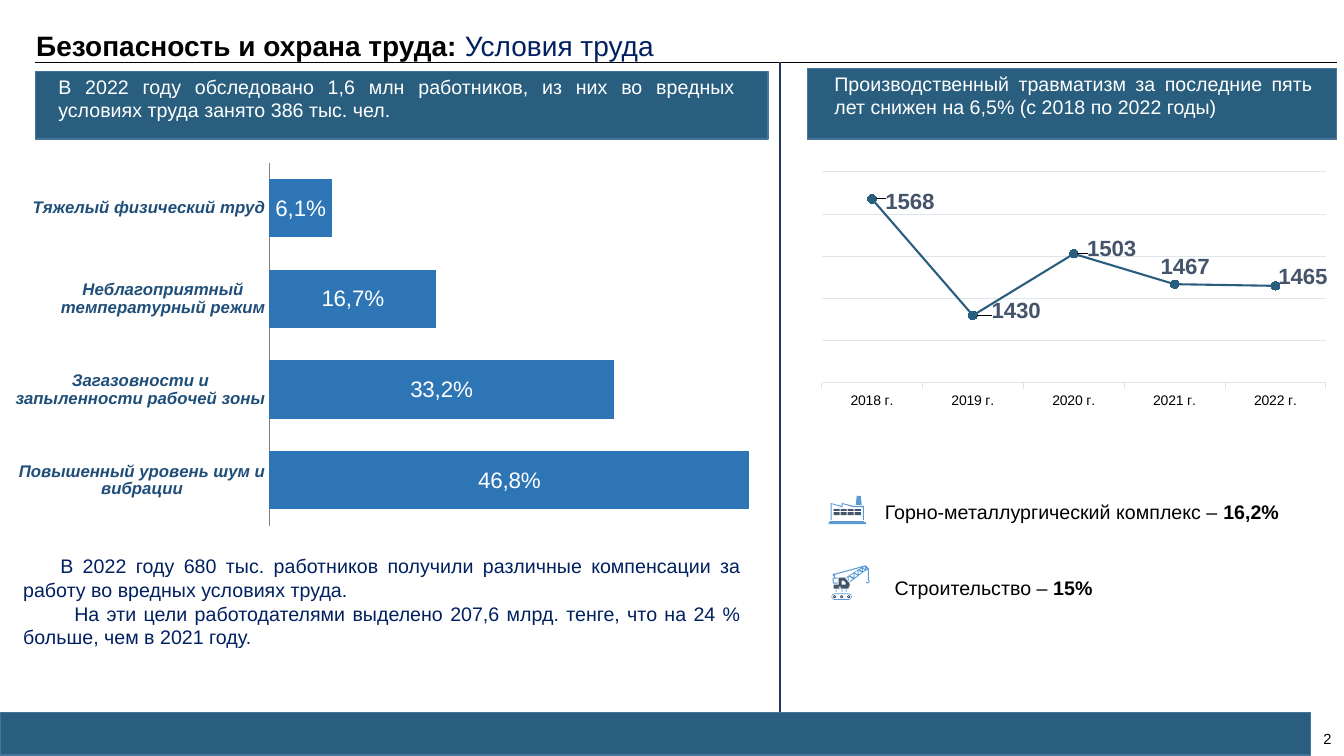
import lxml.etree
import pptx
import pptx.chart.data
import pptx.dml.color
import pptx.enum.chart
import pptx.enum.shapes
import pptx.enum.text
import pptx.oxml
import pptx.oxml.ns
import pptx.util

Pt = pptx.util.Pt
chart_enum = pptx.enum.chart
qn = pptx.oxml.ns.qn
COLORS = {"teal": "295E7E", "edge": "43739E", "bar": "2E75B6", "navy": "002060",
          "divider": "203864", "category": "1F4E79", "slate": "44546A", "sky": "5B9BD5",
          "grid": "E0E5EB", "axis": "808080", "black": "000000", "white": "FFFFFF"}
RGB = {name: pptx.dml.color.RGBColor.from_string(code) for name, code in COLORS.items()}


def style(font, size, color, **flags):
    for name, value in {"name": "Arial", "size": Pt(size), "bold": False, **flags}.items():
        setattr(font, name, value)
    font.color.rgb = RGB[color]


def set_layout(parent, index, values):
    """Put a manual chart layout at the given child index of parent."""
    for old in parent.findall(qn("c:layout")):
        parent.remove(old)
    layout = lxml.etree.Element(qn("c:layout"))
    manual = lxml.etree.SubElement(layout, qn("c:manualLayout"))
    for key, value in values.items():
        lxml.etree.SubElement(manual, qn("c:" + key)).set("val", str(value))
    parent.insert(index, layout)


deck = pptx.Presentation()
deck.slide_width, deck.slide_height = Pt(960), Pt(540)
slide = deck.slides.add_slide(deck.slide_layouts[6])
shapes = slide.shapes

# Rules and filled panels
for start_x, start_y, end_x, end_y, color, width in [
        (25.2, 44.64, 954.72, 44.64, "black", 0.5),
        (557.28, 44.64, 557.28, 509.04, "divider", 1.5)]:
    rule = shapes.add_connector(pptx.enum.shapes.MSO_CONNECTOR.STRAIGHT,
                                Pt(start_x), Pt(start_y), Pt(end_x), Pt(end_y))
    rule.line.color.rgb, rule.line.width = RGB[color], Pt(width)
    lxml.etree.SubElement(rule._element.spPr, qn("a:effectLst"))

for place, fill in [((0, 509.04, 936, 30.24), "teal"),
                    ((25.2, 51.12, 523.44, 48.24), "teal"),
                    ((576.72, 48.96, 378, 50.4), "teal"),
                    ((938.16, 516.96, 20.88, 20.88), "white")]:
    panel = shapes.add_shape(pptx.enum.shapes.MSO_SHAPE.RECTANGLE, *map(Pt, place))
    panel.shadow.inherit = False
    panel.fill.solid()
    panel.fill.fore_color.rgb = RGB[fill]
    if fill == "teal":
        panel.line.color.rgb, panel.line.width = RGB["edge"], Pt(1)
    else:
        panel.line.fill.background()
page_panel = panel

# Texts: box, insets, anchor, alignment, size, paragraphs of (indent, spans)
TOP, MIDDLE = pptx.enum.text.MSO_ANCHOR.TOP, pptx.enum.text.MSO_ANCHOR.MIDDLE
LEFT, JUSTIFY = pptx.enum.text.PP_ALIGN.LEFT, pptx.enum.text.PP_ALIGN.JUSTIFY
texts = [
    ((25.9, 20.16, 902.88, 24.48), (0, 0), MIDDLE, LEFT, 20,
     [(0, [("Безопасность и охрана труда: ", "black", True), ("Условия труда", "navy", False)])]),
    ((34.56, 49.68, 497.52, 41.04), (7.2, 3.6), TOP, JUSTIFY, 14,
     [(0, [("В 2022 году обследовано 1,6 млн работников, из них во вредных условиях труда "
            "занято 386 тыс. чел.", "white", False)])]),
    ((588.96, 47.52, 355.68, 50.4), (7.2, 3.6), TOP, JUSTIFY, 14,
     [(0, [("Производственный травматизм за последние пять лет снижен на 6,5% "
            "(с 2018 по 2022 годы)", "white", False)])]),
    ((7.2, 391.68, 531.36, 77.04), (9.36, 4.32), TOP, JUSTIFY, 14,
     [(26.5, [("В 2022 году 680 тыс. работников получили различные компенсации за работу "
               "во вредных условиях труда.", "navy", False)]),
      (36.5, [("На эти цели работодателями выделено 207,6 млрд. тенге, что на 24 % больше, "
               "чем в 2021 году.", "navy", False)])]),
    ((624.96, 353.52, 330, 42.48), (7.2, 3.6), TOP, LEFT, 14,
     [(0, [("Горно-металлургический комплекс – ", "black", False), ("16,2%", "black", True)])]),
    ((631.9, 408, 250, 24), (7.2, 3.6), TOP, LEFT, 14,
     [(0, [("Строительство – ", "black", False), ("15%", "black", True)])]),
    (None, (7.2, 3.6), MIDDLE, LEFT, 10.5, [(0, [("2", "black", False)])]),
]
for place, (side, top), anchor, align, size, paragraphs in texts:
    box = shapes.add_textbox(*map(Pt, place)) if place else page_panel
    frame = box.text_frame
    for name, value in {"word_wrap": place is not None, "vertical_anchor": anchor,
                        "margin_left": Pt(side), "margin_right": Pt(side),
                        "margin_top": Pt(top), "margin_bottom": Pt(top)}.items():
        setattr(frame, name, value)
    for number, (indent, spans) in enumerate(paragraphs):
        para = frame.add_paragraph() if number else frame.paragraphs[0]
        para.alignment = align
        if indent:
            para._p.get_or_add_pPr().set("indent", str(Pt(indent)))
        for text, color, bold in spans:
            span = para.add_run()
            span.text = text
            style(span.font, size, color, bold=bold)

# Charts
charts = {}
for key, kind, place, plot_box, top_value, low_value, label_color, categories, values in [
        ("hazards", chart_enum.XL_CHART_TYPE.BAR_STACKED, (7.92, 98.64, 557.28, 280.8),
         (0.331, 0.063, 0.669, 0.923), 50, 0, "white",
         ["Повышенный уровень шум и вибрации", "Загазовности и запыленности рабочей зоны",
          "Неблагоприятный температурный режим", "Тяжелый физический труд"], [46, 33, 16, 6]),
        ("injuries", chart_enum.XL_CHART_TYPE.LINE_MARKERS, (570.24, 119.52, 378, 172.08),
         (0.044, 0.02, 0.956, 0.889), 1600, 1350, "slate",
         [f"{year} г." for year in range(2018, 2023)], [1568, 1430, 1503, 1467, 1465])]:
    data = pptx.chart.data.CategoryChartData()
    data.categories = categories
    data.add_series("Series 1", values)
    chart = shapes.add_chart(kind, *map(Pt, place), data).chart
    chart.has_legend = chart.has_title = False
    style(chart.font, 10, "black")
    set_layout(chart._chartSpace.xpath(".//c:plotArea")[0], 0,
               {"layoutTarget": "inner", "xMode": "edge", "yMode": "edge",
                **dict(zip("xywh", plot_box))})
    value_axis = chart.value_axis
    value_axis.maximum_scale, value_axis.minimum_scale = top_value, low_value
    value_axis.visible = value_axis.has_major_gridlines = False
    chart.plots[0].vary_by_categories = False
    labels = chart.series[0].data_labels
    labels.show_value = True
    style(labels.font, 16, label_color, bold=True)
    charts[key] = chart

hazards = charts["hazards"]
plot, series = hazards.plots[0], hazards.series[0]
plot.gap_width, plot.overlap = 56, 52
series.format.fill.solid()
series.format.fill.fore_color.rgb = RGB["bar"]
axis = hazards.category_axis
axis.major_tick_mark = chart_enum.XL_TICK_MARK.NONE
axis.format.line.color.rgb = RGB["axis"]
style(axis.tick_labels.font, 12, "category", bold=True, italic=True)
for number, text in enumerate(["46,8%", "33,2%", "16,7%", "6,1%"]):
    label = series.points[number].data_label
    span = label.text_frame.paragraphs[0].add_run()
    span.text = text
    style(span.font, 16, "white")
    label.position = chart_enum.XL_LABEL_POSITION.CENTER

injuries = charts["injuries"]
series = injuries.series[0]
series.smooth = False
series.format.line.color.rgb, series.format.line.width = RGB["teal"], Pt(1.5)
series.marker.style, series.marker.size = chart_enum.XL_MARKER_STYLE.CIRCLE, 6
series.marker.format.fill.solid()
series.marker.format.fill.fore_color.rgb = RGB["teal"]
series.marker.format.line.color.rgb = RGB["teal"]
injuries.value_axis.has_major_gridlines = True
injuries.value_axis.major_unit = 50
axis = injuries.category_axis
axis.major_tick_mark = chart_enum.XL_TICK_MARK.OUTSIDE
style(axis.tick_labels.font, 10, "black")
for line in (injuries.value_axis.major_gridlines.format.line, axis.format.line):
    line.color.rgb, line.width = RGB["grid"], Pt(0.75)
for number, (side, shift_x, shift_y) in enumerate([
        ("RIGHT", 0.01, 0.01), ("RIGHT", 0.02, -0.02), ("RIGHT", 0.01, -0.02),
        ("ABOVE", 0.02, 0.01), ("RIGHT", -0.01, -0.04)]):
    label = series.points[number].data_label
    style(label.font, 16, "slate", bold=True)
    label.position = getattr(chart_enum.XL_LABEL_POSITION, side)
    set_layout(series._element.xpath(".//c:dLbl")[number], 1, {"x": shift_x, "y": shift_y})
series._element.xpath("c:dLbls")[0].append(pptx.oxml.parse_xml(
    '<c:extLst xmlns:c="http://schemas.openxmlformats.org/drawingml/2006/chart">'
    '<c:ext uri="{CE6537A1-D6FC-4f65-9D91-7224C49458BB}" '
    'xmlns:c15="http://schemas.microsoft.com/office/drawing/2012/chart">'
    '<c15:showLeaderLines val="0"/></c:ext></c:extLst>'))

# Icons: outlines in hundredths of an inch
windows = [[(x, y), (x + 6, y), (x + 6, y + height), (x, y + height)]
           for y, height in [(505, 2), (508, 3)] for x in range(827, 849, 7)]
factory = [
    [(854, 492), (855, 501), (849, 501), (850, 492)],
    [(859, 518), (859, 520), (822, 520), (822, 518), (823, 518), (823, 517), (857, 517), (857, 518)],
    [(857, 502), (847, 502), (835, 499), (835, 502), (824, 499), (824, 516), (825, 516), (825, 500),
     (835, 503), (836, 503), (836, 500), (846, 503), (856, 503), (856, 516), (857, 516)]]
wheels = [[(x - r, 592), (x - r * 0.7, 592 - r * 0.7), (x, 592 - r), (x + r * 0.7, 592 - r * 0.7),
           (x + r, 592), (x + r * 0.7, 592 + r * 0.7), (x, 592 + r), (x - r * 0.7, 592 + r * 0.7)]
          for x in (828, 835, 842) for r in (1.5, 0.5)]
cab = [
    [(838, 573), (832, 573), (832, 582), (834, 582), (834, 584), (842, 584), (842, 582), (843, 582),
     (843, 579)],
    [(839, 580), (835, 580), (835, 576), (837, 576), (839, 578)],
    [(833, 583), (833, 584), (827, 584), (827, 580), (832, 580), (832, 583)]]
track = [[(828, 592 + r), (828 - r * 0.7, 592 + r * 0.7), (828 - r, 592), (828 - r * 0.7, 592 - r * 0.7),
          (828, 592 - r), (842, 592 - r), (842 + r * 0.7, 592 - r * 0.7), (842 + r, 592),
          (842 + r * 0.7, 592 + r * 0.7), (842, 592 + r)] for r in (3.2, 2.5)]
supports = [[(x, 585), (x + 1, 585), (x + 1, 587), (x, 587)] for x in (829, 835, 839)]
boom = [
    [(862, 575), (862, 564), (859, 561), (858, 561), (829, 569), (827, 569), (826, 570), (827, 572),
     (828, 573), (826, 573), (826, 577), (827, 579), (831, 579), (831, 573), (829, 573), (828, 572),
     (829, 570), (855, 563), (839, 573), (839, 574), (841, 572), (841, 576), (842, 577), (842, 572),
     (846, 574), (843, 577), (843, 578), (856, 568), (861, 565), (861, 575), (862, 577), (861, 578),
     (860, 577), (859, 578), (861, 579), (863, 577)],
    [(831, 574), (831, 578), (828, 578), (827, 577), (827, 574)],
    [(847, 573), (843, 571), (847, 569)], [(848, 573), (848, 569), (851, 571)],
    [(851, 570), (848, 568), (851, 566)], [(852, 570), (852, 566), (855, 568)],
    [(855, 567), (853, 565), (855, 564)], [(856, 567), (856, 564), (858, 566)],
    [(856, 563), (858, 562), (858, 565)], [(859, 565), (859, 563), (860, 564)]]
for outlines, color in [(windows, "slate"), (factory, "sky"),
                        (wheels + cab, "slate"), (track + boom + supports, "sky")]:
    start_x, start_y = outlines[0][0]
    builder = shapes.build_freeform(start_x * 10, start_y * 10, scale=Pt(0.72) / 10)
    for outline in outlines:
        points = [(x * 10, y * 10) for x, y in outline]
        builder.move_to(*points[0])
        builder.add_line_segments(points[1:], close=True)
    icon = builder.convert_to_shape()
    icon.shadow.inherit = False
    icon.fill.solid()
    icon.fill.fore_color.rgb = RGB[color]
    icon.line.fill.background()

deck.save("out.pptx")
